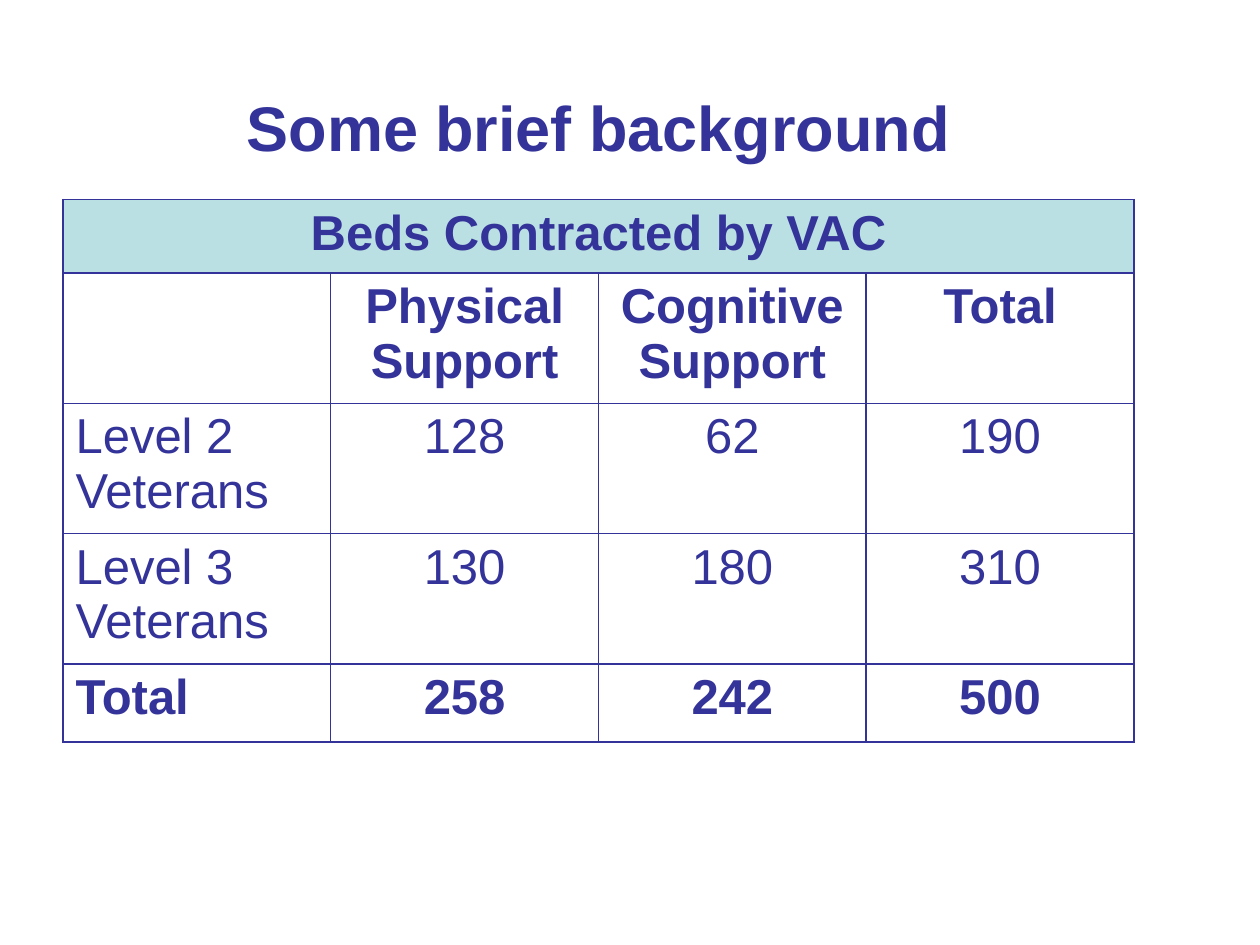
from dataclasses import dataclass

from lxml import etree
from pptx import Presentation
from pptx.dml.color import RGBColor
from pptx.enum.text import MSO_ANCHOR, PP_ALIGN
from pptx.oxml.ns import qn
from pptx.util import Pt

LEFT, CENTER = PP_ALIGN.LEFT, PP_ALIGN.CENTER
MIDDLE, TOP = MSO_ANCHOR.MIDDLE, MSO_ANCHOR.TOP


@dataclass(frozen=True)
class Theme:
    font: str = "Arial"
    ink: str = "333399"
    band: str = "BBE0E3"
    title: float = 36
    body: float = 28
    line: float = 1


THEME = Theme()
ROWS = [
    ["Beds Contracted by VAC", "", "", ""],
    ["", "Physical Support", "Cognitive Support", "Total"],
    ["Level 2 Veterans", "128", "62", "190"],
    ["Level 3 Veterans", "130", "180", "310"],
    ["Total", "258", "242", "500"],
]
HEIGHTS = [42, 74.4, 74.4, 74.4, 44.6]
BOLD_ROWS = {0, 1, 4}


def write(frame, text, size, bold, align):
    """Put one styled paragraph in a text frame."""
    para = frame.paragraphs[0]
    para.alignment = align
    run = para.add_run()
    run.text = text
    style = {"name": THEME.font, "size": Pt(size), "bold": bold}
    for key, value in style.items():
        setattr(run.font, key, value)
    run.font.color.rgb = RGBColor.from_string(THEME.ink)


def border(cell):
    """Draw a line on all four sides of a cell."""
    props = cell._tc.get_or_add_tcPr()
    for side in ("a:lnL", "a:lnR", "a:lnT", "a:lnB"):
        line = etree.SubElement(props, qn(side), w=str(Pt(THEME.line)))
        fill = etree.SubElement(line, qn("a:solidFill"))
        etree.SubElement(fill, qn("a:srgbClr"), val=THEME.ink)


def add_title(slide, box, text):
    frame = slide.shapes.add_textbox(*map(Pt, box)).text_frame
    frame.word_wrap = True
    frame.vertical_anchor = MIDDLE
    write(frame, text, THEME.title, True, CENTER)


def add_beds(slide, box):
    count = len(ROWS[0])
    table = slide.shapes.add_table(len(ROWS), count, *map(Pt, box)).table
    for col in table.columns:
        col.width = Pt(box[2] / count)
    for row, height in zip(table.rows, HEIGHTS):
        row.height = Pt(height)

    # Heading band across all columns
    table.cell(0, 0).merge(table.cell(0, count - 1))

    for r, texts in enumerate(ROWS):
        for c, text in enumerate(texts):
            cell = table.cell(r, c)
            cell.vertical_anchor = TOP
            border(cell)
            if r == 0:
                cell.fill.solid()
                cell.fill.fore_color.rgb = RGBColor.from_string(THEME.band)
            else:
                cell.fill.background()
            if text:
                align = LEFT if c == 0 and r > 0 else CENTER
                write(cell.text_frame, text, THEME.body, r in BOLD_ROWS, align)


def main():
    deck = Presentation()
    deck.slide_width, deck.slide_height = Pt(720), Pt(540)
    slide = deck.slides.add_slide(deck.slide_layouts[6])
    add_title(slide, (36, 42, 612, 60), "Some brief background")
    add_beds(slide, (36, 114, 612, sum(HEIGHTS)))
    deck.save("out.pptx")


if __name__ == "__main__":
    main()
